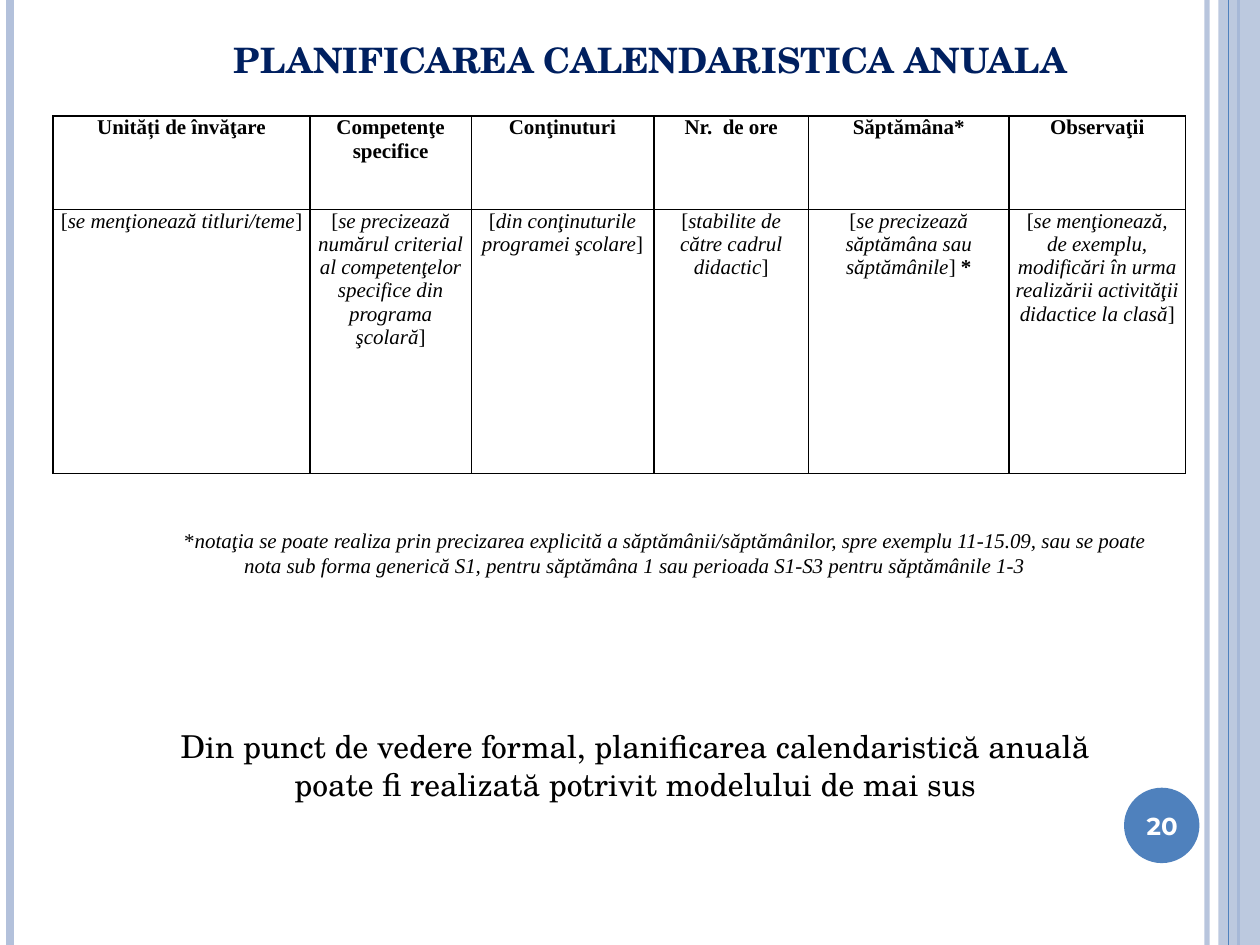
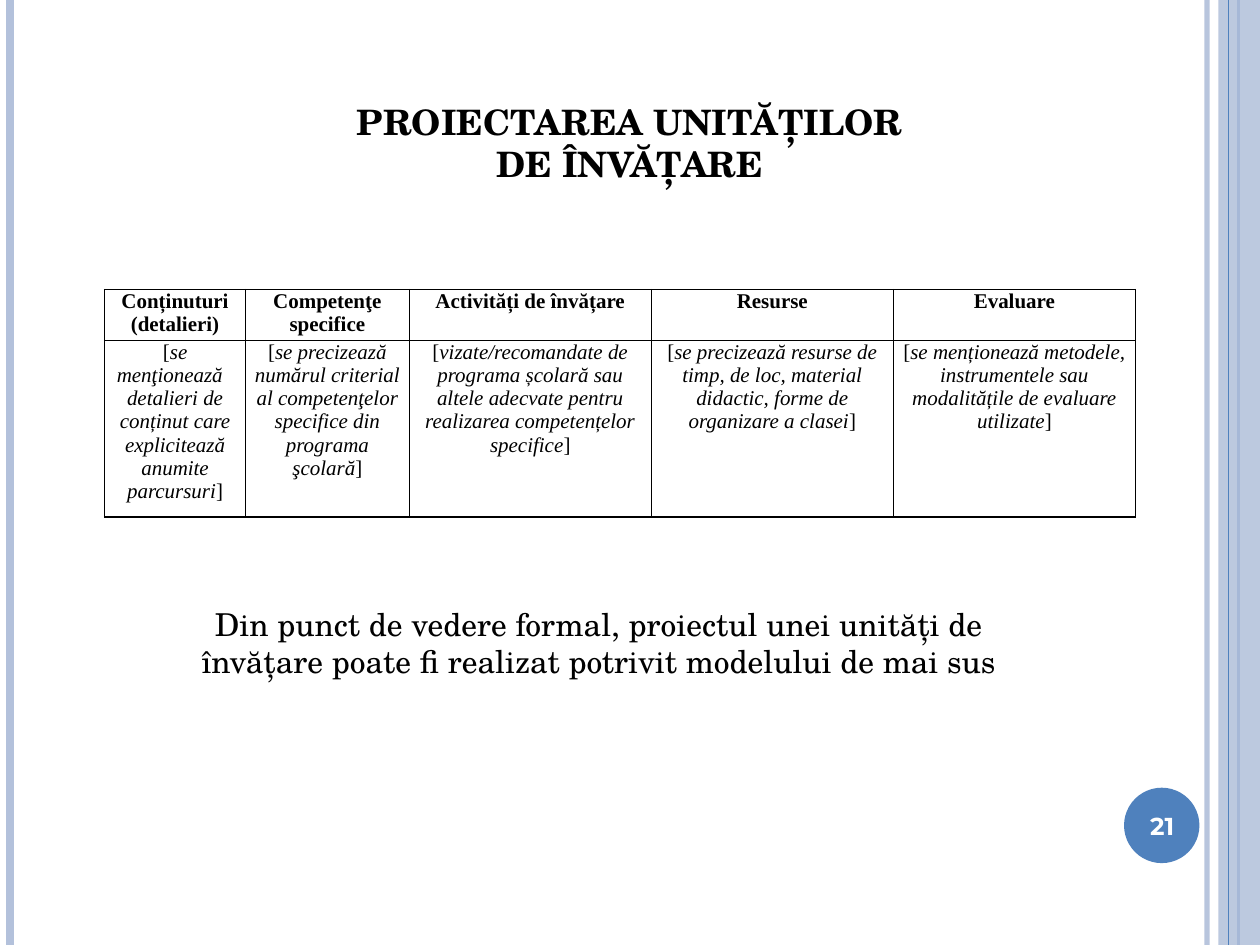
from lxml import etree
from pptx import Presentation, util as u
from pptx.dml.color import RGBColor
from pptx.enum import shapes, text
from pptx.oxml.ns import qn

COLORS = {"text": "000000", "navy": "002060", "blue": "4F81BD",
          "pale": "B3C1DB", "white": "FFFFFF"}
SERIF, SCHOOL, SANS = "Times New Roman", "TeX Gyre Schola", "Montserrat"
WIDTH, HEIGHT = 25.4, 19.05

# Font formats; boxes below are (left, top, width, height) in cm
CELL = {"name": SERIF, "size": 12, "color": "text"}
BODY = {"name": SCHOOL, "size": 18, "color": "text"}
TITLE = {"name": SCHOOL, "size": 20, "bold": True}
NUMBER = {"name": SANS, "size": 14, "color": "white", "bold": True}

# Vertical rules: (x in cm, colour, points, opacity in percent)
RULES = [(24.33, "pale", 3, 93), (0.2, "pale", 4.5, 100),
         (24.97, "blue", 1.5, 100), (24.77, "blue", 0.75, 100)]
BAND = (24.56, 0, 0.84, HEIGHT)
BADGE = (22.66, 15.88, 1.52, 1.52)
NUMBER_BOX = (22.58, 15.93, 1.7, 1.45)

SPECIFIC = ("Competenţe specifice",
            "[se precizează numărul criterial al competenţelor specifice "
            "din programa şcolară]")
SLIDES = [
    {"number": 20,
     "title": "PLANIFICAREA CALENDARISTICA ANUALA",
     "title_box": (3.81, 0.64, 18.62, 1.11), "title_color": "navy",
     "table_at": (1.07, 2.34), "rows": (1.88, 5.33),
     "widths": (5.18, 3.25, 3.68, 3.12, 4.04, 3.56),
     "columns": [
         ("Unități de învăţare", "[se menţionează titluri/teme]"),
         SPECIFIC,
         ("Conţinuturi", "[din conţinuturile programei şcolare]"),
         ("Nr.  de ore", "[stabilite de către cadrul didactic]"),
         ("Săptămâna*", "[se precizează săptămâna sau săptămânile] *"),
         ("Observaţii", "[se menţionează, de exemplu, modificări în urma "
                        "realizării activităţii didactice la clasă]")],
     "footnote": "notaţia se poate realiza prin precizarea explicită a "
                 "săptămânii/săptămânilor, spre exemplu 11-15.09, sau se "
                 "poate nota sub forma generică S1, pentru săptămâna 1 sau "
                 "perioada S1-S3 pentru săptămânile 1-3",
     "footnote_box": (1.9, 10.49, 21.8, 1.3),
     "body": "Din punct de vedere formal, planificarea calendaristică anuală "
             "poate fi realizată potrivit modelului de mai sus",
     "body_box": (2.54, 14.53, 20.53, 1.8)},
    {"number": 21,
     "title": "PROIECTAREA UNITĂȚILOR DE ÎNVĂȚARE",
     "title_box": (6.43, 1.9, 12.53, 1.96), "title_color": "text",
     "table_at": (2.11, 5.84), "rows": (1.02, 3.56),
     "widths": (2.84, 3.3, 4.88, 4.88, 4.88),
     "columns": [
         ("Conținuturi\n(detalieri)",
          "[se menţionează   detalieri de conținut care explicitează "
          "anumite parcursuri]"),
         SPECIFIC,
         ("Activități de învățare",
          "[vizate/recomandate de programa școlară sau altele adecvate "
          "pentru realizarea competențelor specifice]"),
         ("Resurse", "[se precizează resurse de timp, de loc, material "
                     "didactic, forme de organizare a clasei]"),
         ("Evaluare", "[se menționează metodele, instrumentele sau "
                      "modalitățile de evaluare utilizate]")],
     "body": "Din punct de vedere formal, proiectul unei unități de învățare "
             "poate fi realizat potrivit modelului de mai sus",
     "body_box": (3.18, 12.06, 17.78, 1.8)},
]


def cm(values):
    return [u.Cm(v) for v in values]


def rgb(name):
    return RGBColor.from_string(COLORS[name])


def set_opacity(element, percent):
    for clr in element.iter(qn("a:srgbClr")):
        etree.SubElement(clr, qn("a:alpha"), val=str(percent * 1000))


def write(tf, paragraphs, fmt):
    """Fill a frame with centred paragraphs, each a list of (text, format changes)."""
    for i, runs in enumerate(paragraphs):
        p = tf.add_paragraph() if i else tf.paragraphs[0]
        p.alignment = text.PP_ALIGN.CENTER
        p.space_before = u.Pt(0)
        for words, changes in runs:
            r = p.add_run()
            r.text = words
            for key, value in {**fmt, **changes}.items():
                if key == "color":
                    r.font.color.rgb = rgb(value)
                else:
                    setattr(r.font, key, u.Pt(value) if key == "size" else value)


def place(sp, box, anchor):
    sp.left, sp.top, sp.width, sp.height = cm(box)
    tf = sp.text_frame
    tf.word_wrap = True
    tf.auto_size = text.MSO_AUTO_SIZE.NONE
    tf.vertical_anchor = anchor
    return tf


def add_plain(slide, kind, box, color):
    sp = slide.shapes.add_shape(kind, *cm(box))
    sp.shadow.inherit = False
    sp.fill.solid()
    sp.fill.fore_color.rgb = rgb(color)
    sp.line.fill.background()
    return sp


def add_frame(slide, layout):
    """Draw the side rules, band and badge, then hand them to the layout."""
    parts = []
    for x, color, points, opacity in RULES:
        line = slide.shapes.add_connector(
            shapes.MSO_CONNECTOR.STRAIGHT, *cm((x, 0, x, HEIGHT)))
        line.line.color.rgb = rgb(color)
        line.line.width = u.Pt(points)
        etree.SubElement(line.element.spPr, qn("a:effectLst"))
        if opacity < 100:
            set_opacity(line.element, opacity)
        parts.append(line)
    band = add_plain(slide, shapes.MSO_SHAPE.RECTANGLE, BAND, "pale")
    set_opacity(band.element, 87)
    parts.insert(3, band)
    parts.append(add_plain(slide, shapes.MSO_SHAPE.OVAL, BADGE, "blue"))
    for part in parts:
        layout.shapes.element.append(part.element)


def style_cell(cell):
    cell.margin_left = cell.margin_right = u.Cm(0.13)
    cell.margin_top = cell.margin_bottom = 0
    tc_pr = cell._tc.get_or_add_tcPr()
    for side in ("lnL", "lnR", "lnT", "lnB"):
        ln = etree.SubElement(tc_pr, qn("a:" + side), w=str(u.Pt(1)))
        fill = etree.SubElement(ln, qn("a:solidFill"))
        etree.SubElement(fill, qn("a:srgbClr"), val=COLORS["text"])
    cell.fill.background()


def hint_runs(hint):
    """Split "[hint] mark" into upright brackets, italic hint and bold mark."""
    inner, bracket, mark = hint[1:].partition("]")
    runs = [("[", {}), (inner, {"italic": True}), (bracket, {})]
    return runs + [(mark, {"bold": True})] if mark else runs


def add_model_table(slide, data):
    widths, rows = data["widths"], data["rows"]
    size = (sum(widths), sum(rows))
    table = slide.shapes.add_table(
        len(rows), len(widths), *cm(data["table_at"] + size)).table
    table.first_row = table.horz_banding = False
    for row, height in zip(table.rows, rows):
        row.height = u.Cm(height)
    for i, (width, (head, hint)) in enumerate(zip(widths, data["columns"])):
        table.columns[i].width = u.Cm(width)
        heading = [[(line, {"bold": True})] for line in head.split("\n")]
        for j, paragraphs in enumerate((heading, [hint_runs(hint)])):
            cell = table.cell(j, i)
            style_cell(cell)
            write(cell.text_frame, paragraphs, CELL)


def add_slide(prs, layout, data):
    slide = prs.slides.add_slide(layout)
    top, middle = text.MSO_ANCHOR.TOP, text.MSO_ANCHOR.MIDDLE
    title, body = slide.placeholders

    tf = place(title, data["title_box"], top)
    write(tf, [[(data["title"], {"color": data["title_color"]})]], TITLE)

    tf = place(body, data["body_box"], top)
    write(tf, [[(data["body"], {})]], BODY)
    p_pr = tf.paragraphs[0]._p.get_or_add_pPr()
    p_pr.set("marL", "0")
    p_pr.set("indent", "0")
    etree.SubElement(p_pr, qn("a:buNone"))

    add_model_table(slide, data)
    if "footnote" in data:
        box = data["footnote_box"]
        tf = place(slide.shapes.add_textbox(*cm(box)), box, middle)
        write(tf, [[("*", {}), (data["footnote"], {"italic": True})]], CELL)
        tf.paragraphs[0]._p.get_or_add_pPr().set("indent", str(u.Cm(1.24)))

    number = slide.shapes.add_textbox(*cm(NUMBER_BOX))
    write(place(number, NUMBER_BOX, middle), [[(str(data["number"]), {})]], NUMBER)
    return slide


def main():
    prs = Presentation()
    prs.slide_width, prs.slide_height = cm((WIDTH, HEIGHT))
    layout = prs.slide_layouts.get_by_name("Title and Content")
    slides = [add_slide(prs, layout, data) for data in SLIDES]
    add_frame(slides[0], layout)
    prs.save("out.pptx")


if __name__ == "__main__":
    main()
